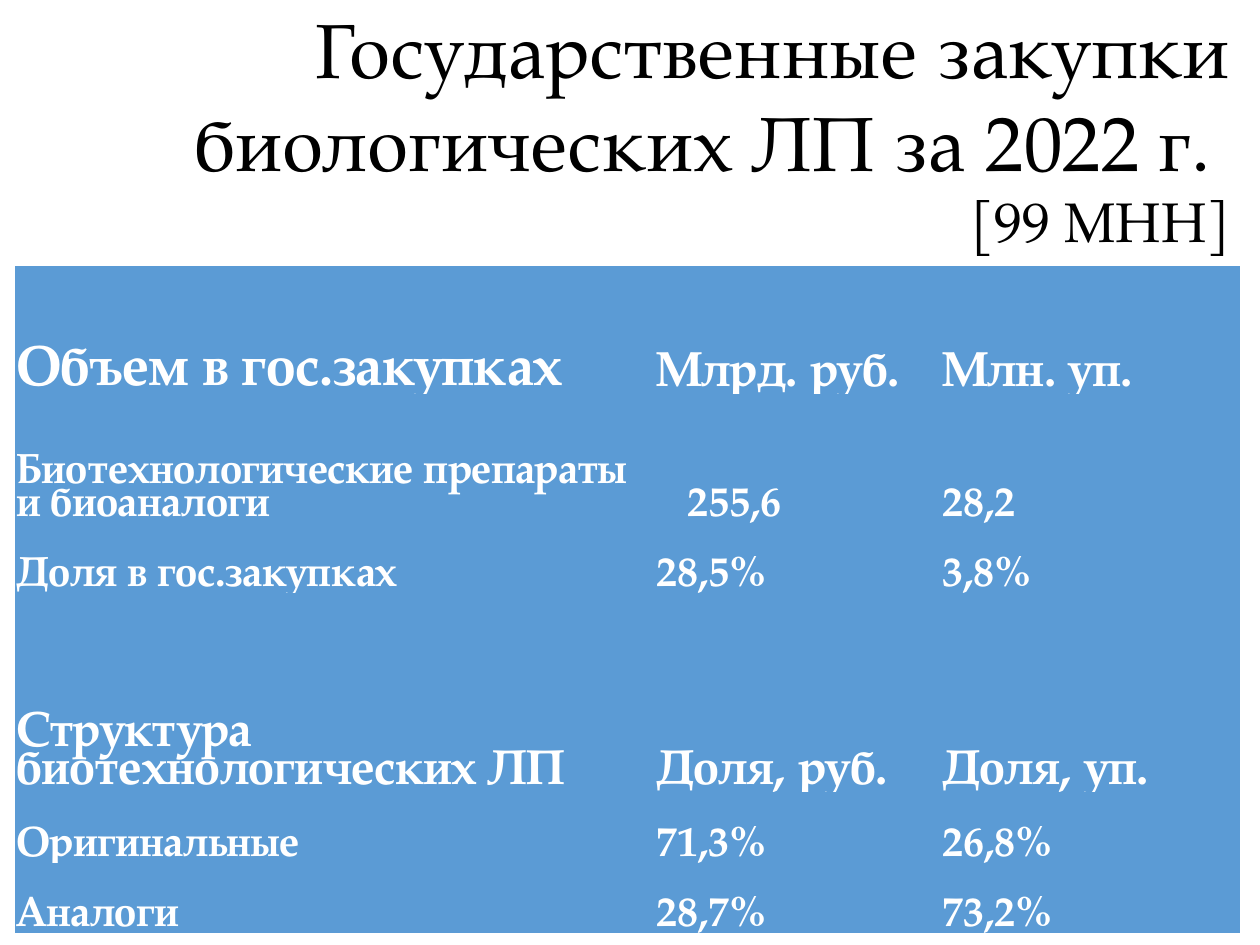
from dataclasses import dataclass

from pptx import Presentation
from pptx.dml.color import RGBColor
from pptx.enum.text import MSO_ANCHOR, PP_ALIGN
from pptx.util import Cm, Pt


@dataclass(frozen=True)
class Theme:
    font: str = "TeX Gyre Pagella"
    ink: RGBColor = RGBColor(0, 0, 0)
    light: RGBColor = RGBColor(255, 255, 255)
    fill: RGBColor = RGBColor(0x5B, 0x9B, 0xD5)
    title: int = 44
    large: int = 32
    heading: int = 28
    body: int = 24


THEME = Theme()
TITLE_LINES = [
    ("Государственные закупки биологических ЛП за 2022 г. ", THEME.title),
    ("[99 МНН]", THEME.large),
]
TALL, LOW = 2.59, 1.42
COLUMN_WIDTHS = [12.9, 5.77, 6.02]
# Row height, size of the first column, size of the others, texts
ROWS = [
    (TALL, THEME.large, THEME.heading, ["Объем в гос.закупках", "Млрд. руб.", "Млн. уп."]),
    (TALL, THEME.body, THEME.body,
     ["Биотехнологические препараты и биоаналоги", "255,6", "28,2"]),
    (LOW, THEME.body, THEME.body, ["Доля в гос.закупках", "28,5%", "3,8%"]),
    (LOW, THEME.body, THEME.body, ["", "", ""]),
    (TALL, THEME.heading, THEME.heading,
     ["Структура биотехнологических ЛП", "Доля, руб.", "Доля, уп."]),
    (LOW, THEME.body, THEME.body, ["Оригинальные", "71,3%", "26,8%"]),
    (LOW, THEME.body, THEME.body, ["Аналоги", "28,7%", "73,2%"]),
]
INDENTED_VALUE = (1, 1)


def style_text(para, size, color, bold=False):
    for span in para.runs:
        span.font.name = THEME.font
        span.font.size = Pt(size)
        span.font.bold = bold
        span.font.color.rgb = color


def add_title(page, left, top, width, height):
    box = page.shapes.add_textbox(Cm(left), Cm(top), Cm(width), Cm(height))
    frame = box.text_frame
    frame.word_wrap = True
    frame.vertical_anchor = MSO_ANCHOR.MIDDLE
    frame.margin_left = frame.margin_right = frame.margin_top = Cm(0.5)
    frame.margin_bottom = Cm(0.13)
    frame.text = "\n".join(text for text, size in TITLE_LINES)
    for para, (text, size) in zip(frame.paragraphs, TITLE_LINES):
        para.alignment = PP_ALIGN.RIGHT
        style_text(para, size, THEME.ink)


def fill_cell(cell, text, size, indent):
    cell.fill.solid()
    cell.fill.fore_color.rgb = THEME.fill
    cell.vertical_anchor = MSO_ANCHOR.BOTTOM
    cell.margin_left = Cm(indent)
    cell.margin_right = cell.margin_top = Cm(0.03)
    cell.margin_bottom = 0
    if text:
        cell.text_frame.text = text
        para = cell.text_frame.paragraphs[0]
        para.line_spacing = 0.8
        style_text(para, size, THEME.light, bold=True)


def add_purchase_table(page, left, top):
    width, height = sum(COLUMN_WIDTHS), sum(row[0] for row in ROWS)
    table = page.shapes.add_table(
        len(ROWS), len(COLUMN_WIDTHS), Cm(left), Cm(top), Cm(width), Cm(height)
    ).table
    table.first_row = table.horz_banding = False
    # Remove the white grid of the default table style
    style = table._tbl.tblPr.find("{*}tableStyleId")
    style.text = "{2D5ABB26-0587-4C30-8999-92F81FD0307C}"
    for column, column_width in zip(table.columns, COLUMN_WIDTHS):
        column.width = Cm(column_width)
    for row_index, (row_height, first_size, other_size, texts) in enumerate(ROWS):
        table.rows[row_index].height = Cm(row_height)
        for column_index, text in enumerate(texts):
            size = other_size if column_index else first_size
            indent = 0.65 if (row_index, column_index) == INDENTED_VALUE else 0.03
            fill_cell(table.cell(row_index, column_index), text, size, indent)


def main():
    deck = Presentation()
    deck.slide_width, deck.slide_height = Cm(25.4), Cm(19.05)
    page = deck.slides.add_slide(deck.slide_layouts[6])
    add_title(page, -0.1, -0.58, 25.4, 5.94)
    add_purchase_table(page, 0.3, 5.36)
    deck.save("out.pptx")


if __name__ == "__main__":
    main()
